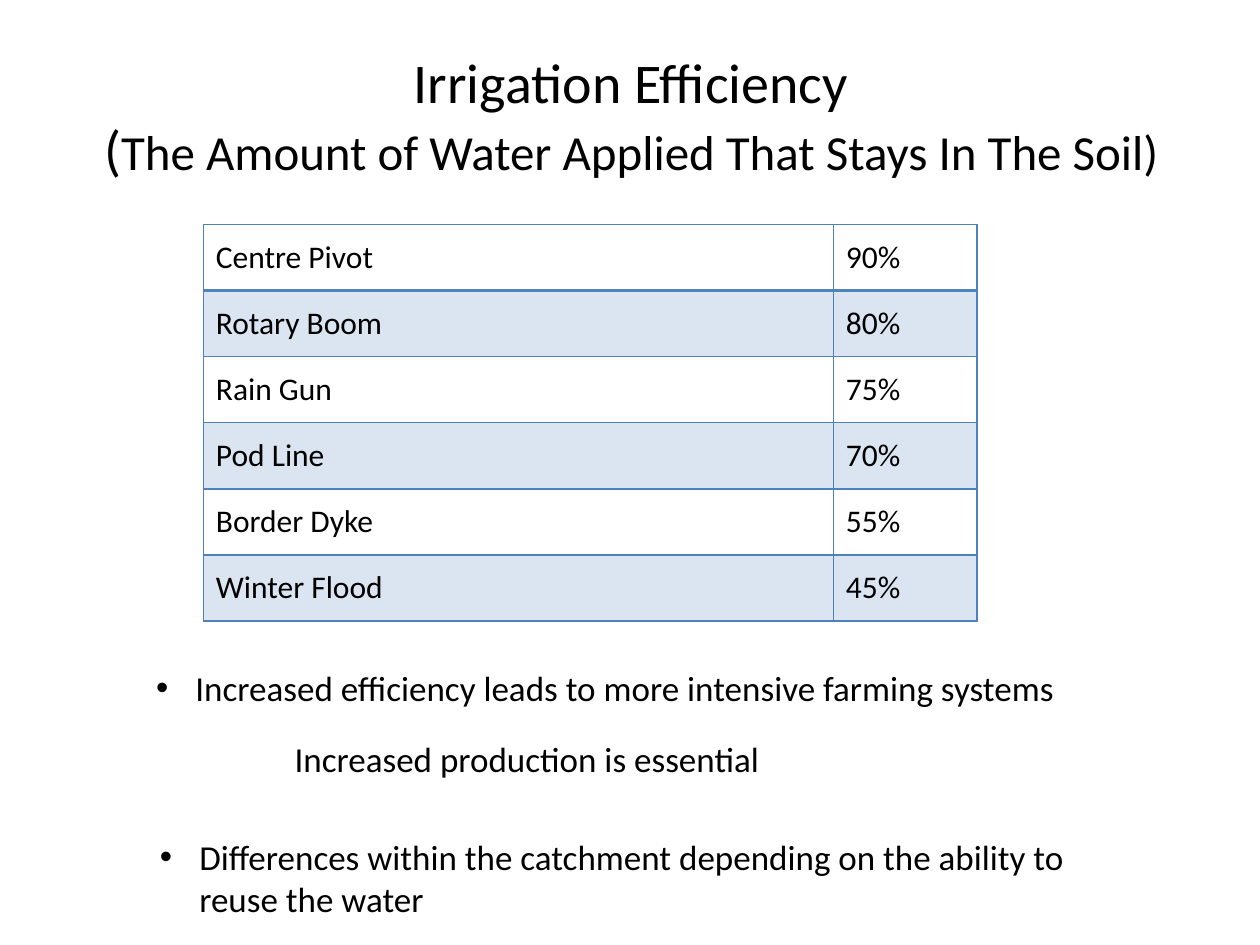
from lxml import etree
from pptx import Presentation
from pptx.dml.color import RGBColor
from pptx.enum import text
from pptx.oxml import ns
from pptx.util import Pt

BLACK = RGBColor(0x00, 0x00, 0x00)
BLUE = RGBColor(0x4F, 0x81, 0xBD)
FONT = "Calibri"
EFFICIENCIES = [
    ("Centre Pivot", "90%"),
    ("Rotary Boom", "80%"),
    ("Rain Gun", "75%"),
    ("Pod Line", "70%"),
    ("Border Dyke", "55%"),
    ("Winter Flood", "45%"),
]
NOTES = [
    ("Increased efficiency leads to more intensive farming systems", True, (0, 0, 532.8, 31.7)),
    ("Increased production is essential", False, (79.2, 40.3, 311.8, 31.7)),
    ("Differences within the catchment depending on the ability to reuse the water",
     True, (2.2, 96.5, 544.3, 55.4)),
]


def format_run(run, size):
    """Give a run the slide's font in black at the given size."""
    run.font.name = FONT
    run.font.size = Pt(size)
    run.font.color.rgb = BLACK


def add_text_box(slide, left, top, width, height):
    """Add a wrapping text box and return its text frame."""
    box = slide.shapes.add_textbox(Pt(left), Pt(top), Pt(width), Pt(height))
    box.text_frame.word_wrap = True
    return box.text_frame


def add_title(slide, left, top, width, height):
    """Add the centred two-line title."""
    frame = add_text_box(slide, left, top, width, height)
    frame.vertical_anchor = text.MSO_ANCHOR.MIDDLE
    paragraph = frame.paragraphs[0]
    paragraph.text = "Irrigation Efficiency\v("
    paragraph.alignment = text.PP_ALIGN.CENTER
    for run in paragraph.runs:
        format_run(run, 32)
    subtitle = paragraph.add_run()
    subtitle.text = "The Amount of Water Applied That Stays In The Soil)"
    format_run(subtitle, 28)


def set_borders(cell, top, bottom):
    """Draw blue borders round a cell, with its own top and bottom widths."""
    properties = cell._tc.get_or_add_tcPr()
    widths = {"lnL": 1, "lnR": 1, "lnT": top, "lnB": bottom}
    for position, (side, width) in enumerate(widths.items()):
        line = etree.Element(ns.qn(f"a:{side}"), w=str(Pt(width)))
        fill = etree.SubElement(line, ns.qn("a:solidFill"))
        etree.SubElement(fill, ns.qn("a:srgbClr"), val=str(BLUE))
        properties.insert(position, line)


def set_fill(cell, banded):
    """Tint a banded cell with translucent blue and leave others clear."""
    if not banded:
        cell.fill.background()
        return
    cell.fill.solid()
    cell.fill.fore_color.rgb = BLUE
    color = cell._tc.tcPr.find(f"{ns.qn('a:solidFill')}/{ns.qn('a:srgbClr')}")
    etree.SubElement(color, ns.qn("a:alpha"), val="20000")


def add_efficiency_table(slide, left, top, width, height):
    """Add the table of irrigation methods and their efficiencies."""
    table = slide.shapes.add_table(
        len(EFFICIENCIES), 2, Pt(left), Pt(top), Pt(width), Pt(height)).table
    table.first_row = False
    table.horz_banding = False
    method_width = 360
    table.columns[0].width = Pt(method_width)
    table.columns[1].width = Pt(width - method_width)
    for row, values in enumerate(EFFICIENCIES):
        for column, value in enumerate(values):
            cell = table.cell(row, column)
            cell.text_frame.text = value
            cell.vertical_anchor = text.MSO_ANCHOR.MIDDLE
            format_run(cell.text_frame.paragraphs[0].runs[0], 18)
            set_fill(cell, row % 2 == 1)
            set_borders(cell, 2 if row == 1 else 1, 2 if row == 0 else 1)


def add_bullet(paragraph):
    """Give a paragraph a round bullet with a hanging indent."""
    properties = paragraph._p.get_or_add_pPr()
    properties.set("marL", str(Pt(22.5)))
    properties.set("indent", str(Pt(-22.5)))
    etree.SubElement(properties, ns.qn("a:buFont"), typeface="Arial")
    etree.SubElement(properties, ns.qn("a:buChar"), char="•")


def add_notes(slide, left, top):
    """Add the remarks below the table."""
    for wording, bulleted, (x, y, width, height) in NOTES:
        frame = add_text_box(slide, left + x, top + y, width, height)
        frame.text = wording
        paragraph = frame.paragraphs[0]
        format_run(paragraph.runs[0], 20)
        if bulleted:
            add_bullet(paragraph)


def main():
    """Build and save the slide."""
    presentation = Presentation()
    presentation.slide_width = Pt(720)
    presentation.slide_height = Pt(540)
    slide = presentation.slides.add_slide(presentation.slide_layouts[6])
    add_title(slide, 36.7, 20.5, 648, 90)
    add_efficiency_table(slide, 116.2, 128.2, 442, 226.8)
    add_notes(slide, 82.1, 377.5)
    presentation.save("out.pptx")


if __name__ == "__main__":
    main()
